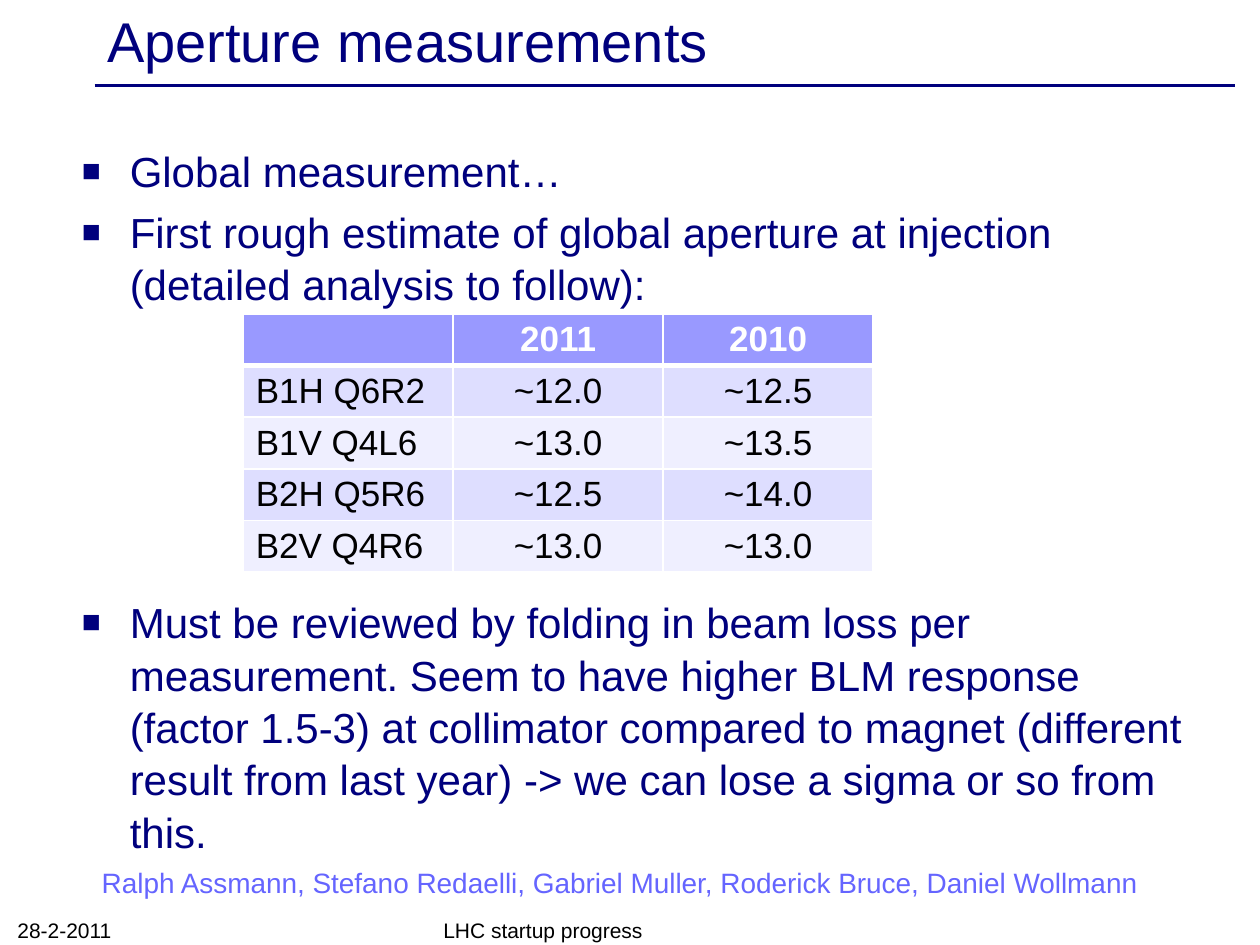
from pptx import Presentation
from pptx.dml.color import RGBColor
from pptx.enum.text import MSO_ANCHOR, MSO_AUTO_SIZE, PP_ALIGN
from pptx.oxml.ns import qn
from pptx.util import Inches, Pt
from lxml.etree import SubElement

INK = {"navy": "00007D", "blue": "6565FF", "head": "9999FF", "dark": "DEDEFF",
       "pale": "EFEFFF", "black": "000000", "white": "FFFFFF"}
COLS, ROWS = 100, 75
BULLETS = [("Global measurement…", 0, True),
           ("First rough estimate of global aperture at injection "
            "(detailed analysis to follow):", 4.8, True),
           ("Must be reviewed by folding in beam loss per measurement. Seem to have "
            "higher BLM response (factor 1.5-3) at collimator compared to magnet "
            "(different result from last year) -> we can lose a sigma or so from this.",
            163.2, True),
           (".", 28.4, False)]
DATA = [("", "2011", "2010"),
        ("B1H Q6R2", "~12.0", "~12.5"),
        ("B1V Q4L6", "~13.0", "~13.5"),
        ("B2H Q5R6", "~12.5", "~14.0"),
        ("B2V Q4R6", "~13.0", "~13.0")]


def tint(name):
    return RGBColor.from_string(INK[name])


def write(para, text, size=12, ink="black", bold=False, align=PP_ALIGN.LEFT,
          before=0, line=1.0):
    para.text = text
    para.alignment = align
    para.space_before = Pt(before)
    para.line_spacing = line
    font = para.font
    font.name, font.size, font.bold = "Arial", Pt(size), bold
    font.color.rgb = tint(ink)


def mark(para, shown):
    """Hang the paragraph and give it a square bullet, or none."""
    props = para._p.get_or_add_pPr()
    props.set("marL", str(Inches(0.38)))
    props.set("indent", str(-Inches(0.38) if shown else 0))
    if not shown:
        SubElement(props, qn("a:buNone"))
        return
    color = SubElement(props, qn("a:buClr"))
    SubElement(color, qn("a:srgbClr"), val=INK["navy"])
    SubElement(props, qn("a:buSzPct"), val="75000")
    SubElement(props, qn("a:buFont"), typeface="Arial")
    SubElement(props, qn("a:buChar"), char="■")


def edge(cell, widths):
    """Draw white borders; widths maps a side to points."""
    props = cell._tc.get_or_add_tcPr()
    for spot, (side, width) in enumerate(widths.items()):
        rule = props.makeelement(qn(f"a:ln{side}"), {"w": str(Pt(width))})
        fill = SubElement(rule, qn("a:solidFill"))
        SubElement(fill, qn("a:srgbClr"), val=INK["white"])
        props.insert(spot, rule)


class Deck:
    def __init__(self):
        self.show = Presentation()
        self.show.slide_width, self.show.slide_height = Inches(10), Inches(7.5)
        self.slide = self.show.slides.add_slide(self.show.slide_layouts[1])

    def grid(self, *box):
        """Turn columns and rows into lengths."""
        units = (self.show.slide_width / COLS, self.show.slide_height / ROWS) * 2
        return [round(n * unit) for n, unit in zip(box, units)]

    def place(self, shape, box, anchor):
        shape.left, shape.top, shape.width, shape.height = self.grid(*box)
        frame = shape.text_frame
        frame.word_wrap = True
        frame.auto_size = MSO_AUTO_SIZE.NONE
        frame.vertical_anchor = anchor
        return frame

    def title(self, text, box):
        frame = self.place(self.slide.shapes.title, box, MSO_ANCHOR.MIDDLE)
        write(frame.paragraphs[0], text, size=32, ink="navy")

    def body(self, items, box):
        frame = self.place(self.slide.placeholders[1], box, MSO_ANCHOR.TOP)
        for spot, (text, gap, shown) in enumerate(items):
            para = frame.add_paragraph() if spot else frame.paragraphs[0]
            mark(para, shown)
            write(para, text, size=24, ink="navy", before=gap, line=1.04)

    def note(self, text, box, anchor=MSO_ANCHOR.BOTTOM, **fmt):
        shape = self.slide.shapes.add_textbox(*self.grid(*box))
        write(self.place(shape, box, anchor).paragraphs[0], text, **fmt)

    def rule(self, start, end):
        line = self.slide.shapes.add_connector(1, *self.grid(*start, *end))
        line.line.color.rgb, line.line.width = tint("navy"), Pt(2)
        SubElement(line._element.spPr, qn("a:effectLst"))

    def table(self, data, box):
        table = self.slide.shapes.add_table(
            len(data), len(data[0]), *self.grid(*box)).table
        for r, row in enumerate(data):
            for c, text in enumerate(row):
                cell = table.cell(r, c)
                cell.fill.solid()
                cell.fill.fore_color.rgb = tint(
                    "head" if r == 0 else "dark" if r % 2 else "pale")
                edge(cell, {"L": 1, "R": 1, "T": 3 if r == 1 else 1,
                            "B": 1 if r else 3})
                write(cell.text_frame.paragraphs[0], text, size=20, bold=r == 0,
                      ink="black" if r else "white",
                      align=PP_ALIGN.CENTER if c else PP_ALIGN.LEFT)


def main():
    deck = Deck()
    # Heading
    deck.rule((7.5, 6.8), (98, 6.8))
    deck.title("Aperture measurements", (7.5, 0.3, 90, 5.7))
    # Findings
    deck.body(BULLETS, (5.5, 10.9, 90, 61.2))
    deck.table(DATA, (19.3, 24.9, 50, 20.4))
    # Credits and footer
    deck.note("Ralph Assmann, Stefano Redaelli, Gabriel Muller, Roderick Bruce, "
              "Daniel Wollmann", (4.3, 68.2, 89.8, 3.7), MSO_ANCHOR.TOP,
              size=16, ink="blue", align=PP_ALIGN.CENTER)
    deck.note("28-2-2011", (0.4, 72.4, 23.3, 2.9))
    deck.note("LHC startup progress", (34.2, 72.5, 31.7, 2.8))
    deck.show.save("out.pptx")


if __name__ == "__main__":
    main()
